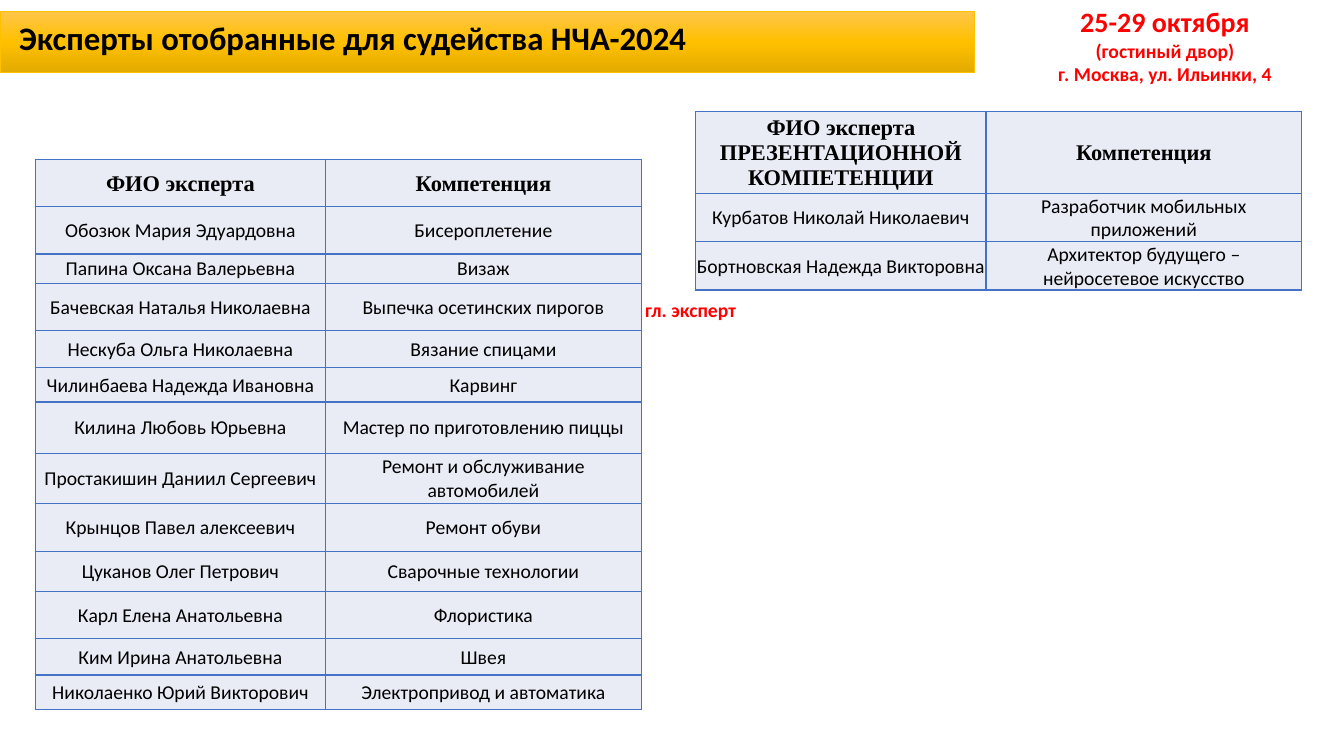
"""Build the slide listing the experts selected to judge НЧА-2024."""
from copy import deepcopy
from dataclasses import dataclass

from lxml import etree
from pptx import Presentation
from pptx.dml.color import RGBColor
from pptx.enum.shapes import MSO_SHAPE
from pptx.enum.text import MSO_ANCHOR, MSO_AUTO_SIZE, PP_ALIGN
from pptx.oxml.ns import qn
from pptx.util import Inches, Pt

RECTANGLE = MSO_SHAPE.RECTANGLE
MIDDLE = MSO_ANCHOR.MIDDLE
LEFT, CENTER = PP_ALIGN.LEFT, PP_ALIGN.CENTER
TITLE_ONLY_LAYOUT = 5


@dataclass(frozen=True)
class Theme:
    """Colours, fonts and type sizes of the slide."""
    ink: str = "000000"
    accent: str = "FF0000"
    gold: str = "FFC000"
    gold_stops: tuple = ("FFC64B", "FFC000", "E3AB00")
    cell: str = "E9EBF5"
    border: str = "4472C4"
    body_font: str = "Calibri"
    header_font: str = "Times New Roman"
    title_size: float = 23.4
    date_size: float = 20
    header_size: float = 16
    body_size: float = 14


THEME = Theme()
COLUMN_WIDTHS = (2.88, 3.13)

EXPERTS = [
    ("ФИО эксперта", "Компетенция"),
    ("Обозюк Мария Эдуардовна", "Бисероплетение"),
    ("Папина Оксана Валерьевна", "Визаж"),
    ("Бачевская Наталья Николаевна", "Выпечка осетинских пирогов"),
    ("Нескуба Ольга Николаевна", "Вязание спицами"),
    ("Чилинбаева Надежда Ивановна", "Карвинг"),
    ("Килина Любовь Юрьевна", "Мастер по приготовлению пиццы"),
    ("Простакишин Даниил Сергеевич", "Ремонт и обслуживание автомобилей"),
    ("Крынцов Павел алексеевич", "Ремонт обуви"),
    ("Цуканов Олег Петрович", "Сварочные технологии"),
    ("Карл Елена Анатольевна", "Флористика"),
    ("Ким Ирина Анатольевна", "Швея"),
    ("Николаенко Юрий Викторович", "Электропривод и автоматика"),
]
EXPERT_ROW_HEIGHTS = (0.47, 0.47, 0.29, 0.47, 0.37, 0.34, 0.51,
                      0.5, 0.47, 0.4, 0.47, 0.36, 0.34)

PRESENTATION_EXPERTS = [
    ("ФИО эксперта ПРЕЗЕНТАЦИОННОЙ КОМПЕТЕНЦИИ", "Компетенция"),
    ("Курбатов Николай Николаевич", "Разработчик мобильных приложений"),
    ("Бортновская Надежда Викторовна",
     "Архитектор будущего – нейросетевое искусство"),
]
PRESENTATION_ROW_HEIGHTS = (0.81, 0.47, 0.48)


def style_paragraph(paragraph, size, color, bold=True,
                    font=THEME.body_font, align=LEFT):
    """Set the font and alignment of a whole paragraph."""
    paragraph.alignment = align
    paragraph.font.name = font
    paragraph.font.size = Pt(size)
    paragraph.font.bold = bold
    paragraph.font.color.rgb = RGBColor.from_string(color)


def add_title(slide, text):
    """Place and format the title placeholder."""
    title = slide.shapes.title
    title.left, title.top = Inches(0.09), Inches(0.11)
    title.width, title.height = Inches(10), Inches(0.58)
    frame = title.text_frame
    frame.text = text
    frame.auto_size = MSO_AUTO_SIZE.NONE
    frame.vertical_anchor = MIDDLE
    paragraph = frame.paragraphs[0]
    paragraph.line_spacing = 0.9
    style_paragraph(paragraph, THEME.title_size, THEME.ink)


def add_banner(slide):
    """Add the gold gradient bar behind the title."""
    banner = slide.shapes.add_shape(
        RECTANGLE, Inches(0), Inches(0.11), Inches(9.66), Inches(0.61))
    banner.shadow.inherit = False
    banner.line.color.rgb = RGBColor.from_string(THEME.gold)
    banner.line.width = Pt(0.5)
    banner.fill.gradient()
    banner.fill.gradient_angle = 270
    stop_list = banner.element.spPr.find(qn("a:gradFill")).find(qn("a:gsLst"))
    stop_list.insert(1, deepcopy(stop_list[0]))
    for index, stop in enumerate(banner.fill.gradient_stops):
        stop.position = index / 2
        stop.color.rgb = RGBColor.from_string(THEME.gold_stops[index])
    slide.shapes.title.element.addprevious(banner.element)


def add_note(slide, left, top, width, height, lines, align=LEFT):
    """Add red bold text from (text, size) lines."""
    box = slide.shapes.add_textbox(
        Inches(left), Inches(top), Inches(width), Inches(height))
    frame = box.text_frame
    frame.word_wrap = True
    frame.auto_size = MSO_AUTO_SIZE.SHAPE_TO_FIT_TEXT
    frame.text = "\n".join(text for text, _ in lines)
    for paragraph, (_, size) in zip(frame.paragraphs, lines):
        style_paragraph(paragraph, size, THEME.accent, align=align)


def add_cell_borders(cell):
    """Draw a thin line on each side of a cell."""
    properties = cell._tc.get_or_add_tcPr()
    for index, side in enumerate(("lnL", "lnR", "lnT", "lnB")):
        line = etree.Element(qn(f"a:{side}"), w=str(Pt(1)))
        fill = etree.SubElement(line, qn("a:solidFill"))
        etree.SubElement(fill, qn("a:srgbClr"), val=THEME.border)
        properties.insert(index, line)


def format_cell(cell, text, is_header):
    """Fill in one table cell."""
    cell.text = text
    cell.vertical_anchor = MIDDLE
    cell.margin_left = cell.margin_right = cell.margin_top = Inches(0.01)
    cell.margin_bottom = Inches(0)
    cell.fill.solid()
    cell.fill.fore_color.rgb = RGBColor.from_string(THEME.cell)
    style_paragraph(
        cell.text_frame.paragraphs[0],
        THEME.header_size if is_header else THEME.body_size,
        THEME.ink, is_header,
        THEME.header_font if is_header else THEME.body_font, CENTER)
    add_cell_borders(cell)


def add_expert_table(slide, left, top, rows, row_heights):
    """Add a two-column table of experts and competences."""
    table = slide.shapes.add_table(
        len(rows), len(COLUMN_WIDTHS), Inches(left), Inches(top),
        Inches(sum(COLUMN_WIDTHS)), Inches(sum(row_heights))).table
    table.horz_banding = False
    for column, width in zip(table.columns, COLUMN_WIDTHS):
        column.width = Inches(width)
    for row_index, (texts, height) in enumerate(zip(rows, row_heights)):
        table.rows[row_index].height = Inches(height)
        for column_index, text in enumerate(texts):
            format_cell(table.cell(row_index, column_index), text,
                        row_index == 0)


def main():
    """Build and save the presentation."""
    presentation = Presentation()
    presentation.slide_width = Inches(13.33)
    presentation.slide_height = Inches(7.5)
    slide = presentation.slides.add_slide(
        presentation.slide_layouts[TITLE_ONLY_LAYOUT])
    add_title(slide, "Эксперты отобранные для судейства НЧА-2024")
    add_banner(slide)
    add_expert_table(slide, 0.35, 1.58, EXPERTS, EXPERT_ROW_HEIGHTS)
    add_note(slide, 6.3, 2.91, 1.92, 0.34,
             [("гл. эксперт", THEME.body_size)])
    add_expert_table(slide, 6.9, 1.11, PRESENTATION_EXPERTS,
                     PRESENTATION_ROW_HEIGHTS)
    add_note(slide, 9.77, 0, 3.57, 0.91,
             [("25-29 октября", THEME.date_size),
              ("(гостиный двор)", THEME.body_size),
              ("г. Москва, ул. Ильинки, 4", THEME.body_size)], CENTER)
    presentation.save("out.pptx")


if __name__ == "__main__":
    main()
